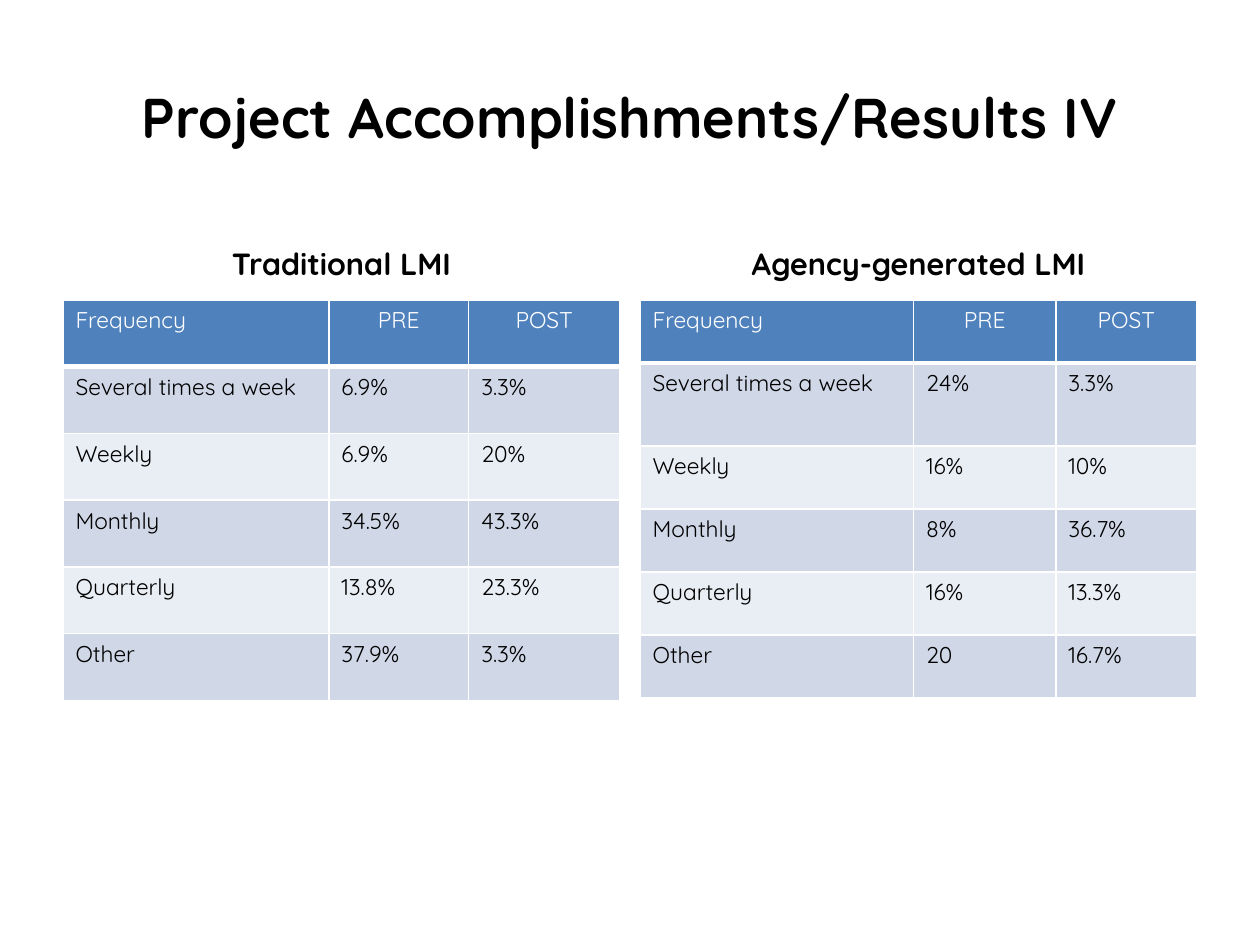
from lxml.etree import SubElement as Sub
from pptx import Presentation
from pptx.dml.color import RGBColor as RGB
from pptx.enum.text import MSO_ANCHOR as Anchor, PP_ALIGN as Align
from pptx.oxml.ns import qn
from pptx.util import Inches, Pt

TITLE = "Project Accomplishments/Results IV"
HEAD = ("Frequency", "PRE", "POST")
PANELS = [
    {
        "name": "Traditional LMI",
        "cols": (2.11, 1.11, 1.2),
        "rows": [0.53] * 6,
        "data": [
            ("Several times a week", "6.9%", "3.3%"),
            ("Weekly", "6.9%", "20%"),
            ("Monthly", "34.5%", "43.3%"),
            ("Quarterly", "13.8%", "23.3%"),
            ("Other", "37.9%", "3.3%"),
        ],
    },
    {
        "name": "Agency-generated LMI",
        "cols": (2.17, 1.13, 1.12),
        "rows": [0.5, 0.66] + [0.5] * 4,
        "data": [
            ("Several times a week", "24%", "3.3%"),
            ("Weekly", "16%", "10%"),
            ("Monthly", "8%", "36.7%"),
            ("Quarterly", "16%", "13.3%"),
            ("Other", "20", "16.7%"),
        ],
    },
]
THEME = {
    "font": "Quicksand",
    "title": 32, "name": 17.5, "cell": 13,
    "ink": "000000", "white": "FFFFFF",
    "head": "4F81BD", "bands": ("D0D8E8", "E9EDF4"),
}
WIDE, TALL = 10, 7.5
EDGE, GAP = 0.5, 0.16
SPAN = (WIDE - 2 * EDGE - GAP) / 2
NAME_TOP, NAME_TALL = 1.68, 0.7


def write(frame, text, size, color=THEME["ink"], bold=False, align=Align.LEFT):
    para = frame.paragraphs[0]
    para.alignment = align
    run = para.add_run()
    run.text = text
    font = run.font
    font.name, font.size, font.bold = THEME["font"], Pt(size), bold
    font.color.rgb = RGB.from_string(color)


def add_label(slide, text, box, size, anchor):
    frame = slide.shapes.add_textbox(*map(Inches, box)).text_frame
    frame.word_wrap = True
    frame.vertical_anchor = anchor
    frame.margin_left = frame.margin_right = Inches(0.47)
    frame.margin_top = frame.margin_bottom = Inches(0.23)
    write(frame, text, size, bold=True, align=Align.CENTER)


def add_rules(cell, head):
    """Draw white cell borders, with a heavier one below the header."""
    props = cell._tc.get_or_add_tcPr()
    for side in "LRTB":
        width = Pt(3 if head and side == "B" else 1)
        line = Sub(props, qn(f"a:ln{side}"), w=str(width))
        fill = Sub(line, qn("a:solidFill"))
        Sub(fill, qn("a:srgbClr"), val=THEME["white"])


def add_grid(slide, panel, left, top):
    data = [HEAD, *panel["data"]]
    cols, rows = panel["cols"], panel["rows"]
    box = map(Inches, (left, top, sum(cols), sum(rows)))
    table = slide.shapes.add_table(len(data), len(HEAD), *box).table
    for col, width in zip(table.columns, cols):
        col.width = Inches(width)
    for row, height in zip(table.rows, rows):
        row.height = Inches(height)
    for r, line in enumerate(data):
        head = r == 0
        back = THEME["head"] if head else THEME["bands"][(r - 1) % 2]
        color = THEME["white"] if head else THEME["ink"]
        for c, text in enumerate(line):
            cell = table.cell(r, c)
            add_rules(cell, head)
            cell.fill.solid()
            cell.fill.fore_color.rgb = RGB.from_string(back)
            align = Align.CENTER if head and c else Align.LEFT
            write(cell.text_frame, text, THEME["cell"], color, align=align)


def main():
    deck = Presentation()
    deck.slide_width, deck.slide_height = Inches(WIDE), Inches(TALL)
    slide = deck.slides.add_slide(deck.slide_layouts[6])
    add_label(slide, TITLE, (EDGE, 0.3, WIDE - 2 * EDGE, 1.25),
              THEME["title"], Anchor.MIDDLE)
    for i, panel in enumerate(PANELS):
        left = EDGE + i * (SPAN + GAP)
        add_label(slide, panel["name"], (left, NAME_TOP, SPAN, NAME_TALL),
                  THEME["name"], Anchor.BOTTOM)
        add_grid(slide, panel, left, NAME_TOP + NAME_TALL)
    deck.save("out.pptx")


if __name__ == "__main__":
    main()
